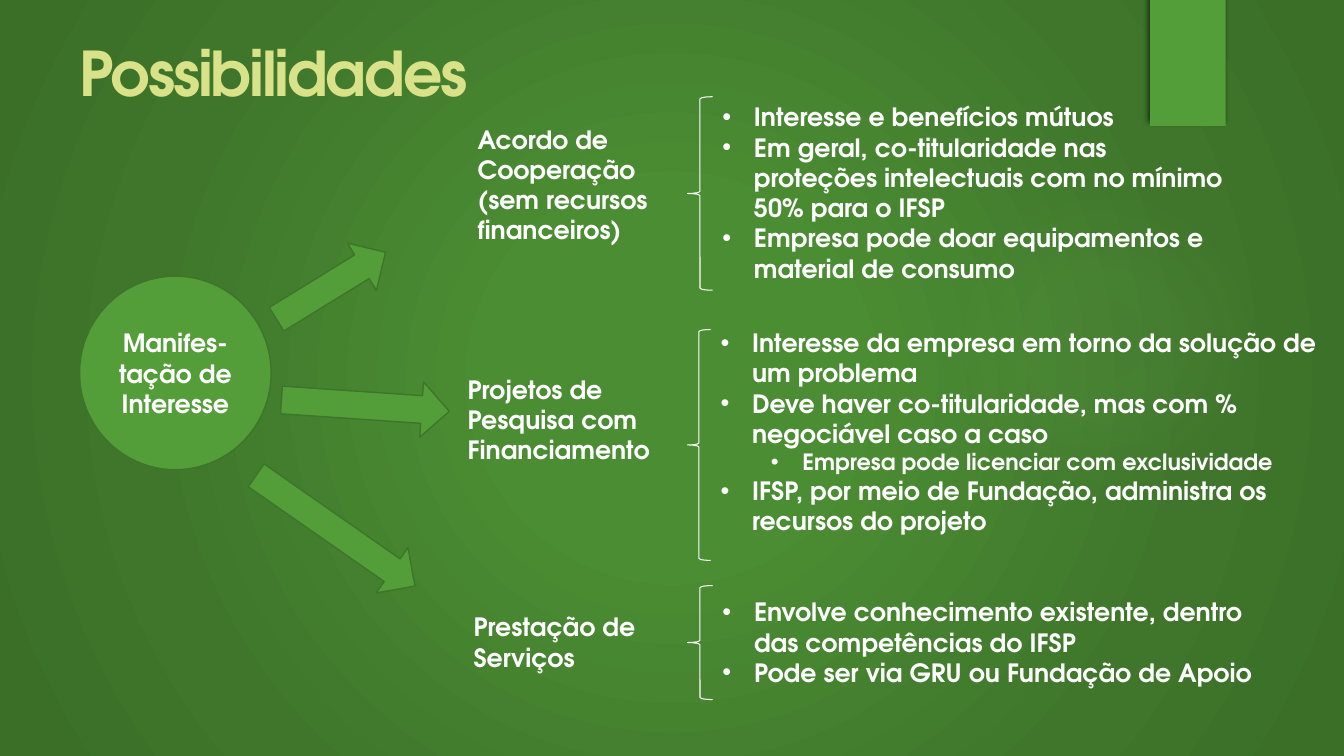
from lxml import etree
from pptx import Presentation
from pptx.dml.color import RGBColor
from pptx.enum.shapes import MSO_SHAPE
from pptx.enum.text import MSO_ANCHOR, PP_ALIGN
from pptx.oxml.ns import qn
from pptx.util import Pt

OVAL, RECTANGLE = MSO_SHAPE.OVAL, MSO_SHAPE.RECTANGLE
ARROW, BRACE = MSO_SHAPE.RIGHT_ARROW, MSO_SHAPE.LEFT_BRACE
TOP, MIDDLE, CENTER = MSO_ANCHOR.TOP, MSO_ANCHOR.MIDDLE, PP_ALIGN.CENTER
FONT = "TeX Gyre Adventor"
GREEN, DARK_GREEN, LIME, WHITE = "549E39", "3E752A", "D9E289", "FFFFFF"
rgb = RGBColor.from_string

prs = Presentation()
prs.slide_width, prs.slide_height = Pt(960), Pt(540)
slide = prs.slides.add_slide(prs.slide_layouts[6])


def add_shape(kind, box, fill=None, line=None, line_width=1):
    shape = slide.shapes.add_shape(kind, *map(Pt, box))
    shape.shadow.inherit = False
    if fill:
        shape.fill.solid()
        shape.fill.fore_color.rgb = rgb(fill)
    else:
        shape.fill.background()
    if line:
        shape.line.color.rgb = rgb(line)
        shape.line.width = Pt(line_width)
    else:
        shape.line.fill.background()
    return shape


def write(shape, text, size=18, color=WHITE, wrap=True, anchor=TOP):
    frame = shape.text_frame
    frame.word_wrap = wrap
    frame.vertical_anchor = anchor
    frame.text = text
    for paragraph in frame.paragraphs:
        for run in paragraph.runs:
            run.font.name, run.font.size, run.font.bold = FONT, Pt(size), True
            run.font.color.rgb = rgb(color)
    return frame


# Radial background and soft halo: (position, colour, opacity) stops in percent
halo = add_shape(OVAL, (677.5, 131.8, 221.8, 221.8), GREEN)
halo.fill.gradient()
slide.background.fill.gradient()
background = slide.element.find(".//" + qn("p:bg"))
for owner, stops in (
    (background, ((0, "4B8D33", 100), (23, "4B8D33", 100),
                  (69, "3F762B", 100), (97, "3B6F28", 100))),
    (halo.element, ((0, "93D07D", 7), (36, "93D07D", 6), (69, "93D07D", 0))),
):
    gradient = owner.find(".//" + qn("a:gradFill"))
    for child in list(gradient):
        gradient.remove(child)
    stop_list = etree.SubElement(gradient, qn("a:gsLst"))
    for position, color, opacity in stops:
        stop = etree.SubElement(stop_list, qn("a:gs"), pos=str(position * 1000))
        tint = etree.SubElement(stop, qn("a:srgbClr"), val=color)
        etree.SubElement(tint, qn("a:alpha"), val=str(opacity * 1000))
    circle = etree.SubElement(gradient, qn("a:path"), path="circle")
    etree.SubElement(circle, qn("a:fillToRect"), l="50000", t="50000", r="50000", b="50000")

# Corner tab with its shadow
tab = add_shape(RECTANGLE, (821.5, 0, 54, 90), GREEN)
effects = tab.element.spPr.find(qn("a:effectLst"))
shadow = etree.SubElement(effects, qn("a:outerShdw"), blurRad=str(Pt(4)),
                          dist=str(Pt(3)), dir=str(245 * 60000))
shade = etree.SubElement(shadow, qn("a:srgbClr"), val="000000")
etree.SubElement(shade, qn("a:alpha"), val="60000")

# Title
title = slide.shapes.add_textbox(*map(Pt, (49.7, 21.6, 795.6, 110.2)))
heading = write(title, "Possibilidades", 44, LIME)
heading.paragraphs[0].runs[0].font.element.set("spc", "-150") if hasattr(
    heading.paragraphs[0].runs[0].font, "element"
) else heading.paragraphs[0]._p.find(".//" + qn("a:rPr")).set("spc", "-150")

# Starting point and the arrows leading out of it
interest = add_shape(OVAL, (56.9, 197.3, 136.8, 138.2), GREEN, DARK_GREEN)
write(interest, "Manifes-tação de Interesse", anchor=MIDDLE).paragraphs[0].alignment = CENTER
for left, top, length, angle in (
    (190.8, 184.3, 91.4, 328.4),
    (200.9, 270, 120.2, 3.9),
    (170.6, 359.3, 138.2, 34.9),
):
    add_shape(ARROW, (left, top, length, 39.6), GREEN, DARK_GREEN).rotation = angle

# Options: label, brace, and details as (level, text)
options = (
    ("Acordo de\nCooperação\n(sem recursos financeiros)", (334.1, 85, 139.7, 94.3), True,
     (491, 69.1, 18, 138.2), (509, 69.1, 376.6, 138.2),
     ((0, "Interesse e benefícios mútuos"),
      (0, "Em geral, co-titularidade nas proteções intelectuais com no mínimo 50% para o IFSP"),
      (0, "Empresa pode doar equipamentos e material de consumo"))),
    ("Projetos de\nPesquisa com\nFinanciamento", (326.9, 263.5, 147.6, 72.7), False,
     (491, 235.4, 16.6, 164.9), (507.6, 230.4, 452.2, 157.7),
     ((0, "Interesse da empresa em torno da solução de um problema"),
      (0, "Deve haver co-titularidade, mas com % negociável caso a caso"),
      (1, "Empresa pode licenciar com exclusividade"),
      (0, "IFSP, por meio de Fundação, administra os recursos do projeto"))),
    ("Prestação de\nServiços", (331.2, 433.4, 136.8, 51.1), False,
     (491, 418.3, 18, 81.4), (509, 422.6, 404.6, 72.7),
     ((0, "Envolve conhecimento existente, dentro das competências do IFSP"),
      (0, "Pode ser via GRU ou Fundação de Apoio"))),
)
for label, label_box, label_wrap, brace_box, details_box, details in options:
    write(slide.shapes.add_textbox(*map(Pt, label_box)), label, wrap=label_wrap)
    add_shape(BRACE, brace_box, line=WHITE, line_width=0.75)
    bullets = write(slide.shapes.add_textbox(*map(Pt, details_box)),
                    "\n".join(text for level, text in details))
    for paragraph, (level, text) in zip(bullets.paragraphs, details):
        paragraph.level = level
        properties = paragraph._p.get_or_add_pPr()
        properties.set("marL", str(Pt(22.5 + 36 * level)))
        properties.set("indent", str(Pt(-22.5)))
        etree.SubElement(properties, qn("a:buFont"), typeface="Arial")
        etree.SubElement(properties, qn("a:buChar"), char="•")
        paragraph.runs[0].font.size = Pt(18 - 2 * level)

prs.save("out.pptx")
